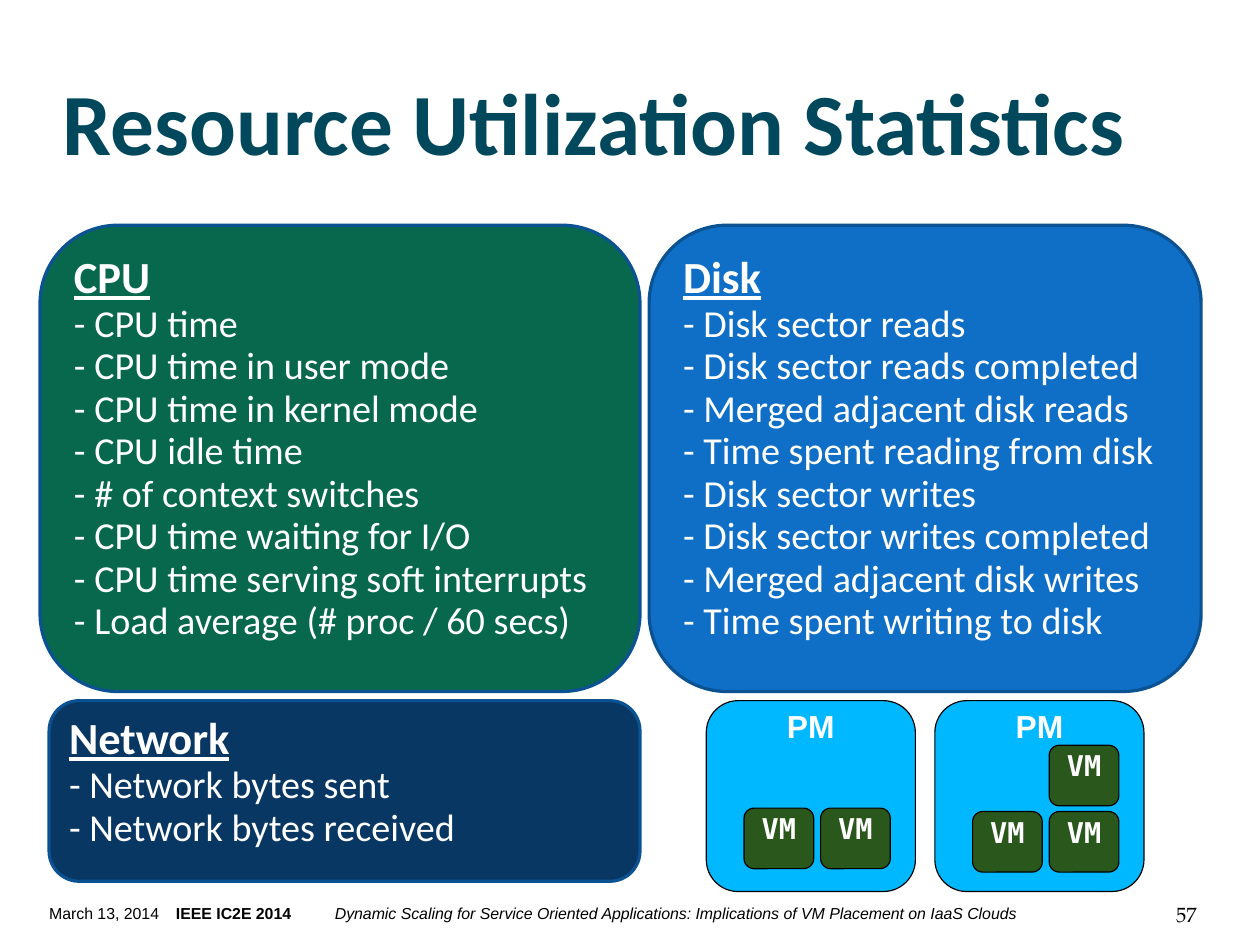
from pptx import Presentation
from pptx.dml.color import RGBColor
from pptx.enum.shapes import MSO_SHAPE
from pptx.enum.text import MSO_ANCHOR, PP_ALIGN
from pptx.util import Emu, Pt
from lxml.etree import SubElement
from pptx.oxml.ns import qn

PX = 9144  # 100 px to the inch
WIDE, HIGH = Emu(10080625), Emu(7559675)  # 28 by 21 cm page
HUES = {
    "white": "FFFFFF", "black": "000000", "title": "02485C", "edge": "0B5292",
    "cpu": "08684E", "disk": "0F6FC6", "net": "083763",
    "pm": "00B8FF", "vm": "2A581C",
}
TIGHT = 0.93

CARDS = [
    ("CPU", "cpu", (35, 197, 525, 408), [
        "CPU time", "CPU time in user mode", "CPU time in kernel mode",
        "CPU idle time", "# of context switches", "CPU time waiting for I/O",
        "CPU time serving soft interrupts", "Load average (# proc / 60 secs)"]),
    ("Disk", "disk", (568, 197, 483, 408), [
        "Disk sector reads", "Disk sector reads completed",
        "Merged adjacent disk reads", "Time spent reading from disk",
        "Disk sector writes", "Disk sector writes completed",
        "Merged adjacent disk writes", "Time spent writing to disk"]),
    ("Network", "net", (43, 613, 517, 158), [
        "Network bytes sent", "Network bytes received"]),
]

# Left edge of each machine, then the column and top of its VMs
HOSTS = [
    (618, [(1, 707), (0, 707)]),
    (818, [(1, 652), (0, 710), (1, 710)]),
]


class Deck:
    def __init__(self):
        self.show = Presentation()
        self.show.slide_width = WIDE
        self.show.slide_height = HIGH
        self.page = self.show.slides.add_slide(self.show.slide_layouts[6])

    def hue(self, name):
        return RGBColor.from_string(HUES[name])

    def style(self, run, font, size, hue, bold=False, slant=False, under=False):
        face = run.font
        face.name, face.size, face.color.rgb = font, Pt(size), self.hue(hue)
        face.bold, face.italic, face.underline = bold, slant, under

    def frame(self, shape, anchor, pad):
        """Set wrapping, anchor and insets; return the text frame."""
        text = shape.text_frame
        text.word_wrap = True
        text.vertical_anchor = anchor
        text.margin_left, text.margin_top, text.margin_right, text.margin_bottom = (
            n * PX for n in pad)
        return text

    def label(self, box, words, font, size, hue, align=PP_ALIGN.LEFT,
              bold=False, pad=(0, 0, 0, 0)):
        shape = self.page.shapes.add_textbox(*(n * PX for n in box))
        text = self.frame(shape, MSO_ANCHOR.MIDDLE, pad)
        text.text = words
        line = text.paragraphs[0]
        line.alignment = align
        self.style(line.runs[0], font, size, hue, bold)

    def round(self, box, fill, edge, width, pad):
        """Draw a rounded box and return its text frame."""
        shape = self.page.shapes.add_shape(
            MSO_SHAPE.ROUNDED_RECTANGLE, *(n * PX for n in box))
        shape.shadow.inherit = False
        shape.fill.solid()
        shape.fill.fore_color.rgb = self.hue(fill)
        shape.line.color.rgb = self.hue(edge)
        shape.line.width = Pt(width)
        return self.frame(shape, MSO_ANCHOR.TOP, pad)

    def card(self, head, fill, box, items):
        text = self.round(box, fill, "edge", 2, (10, 5, 10, 5))
        text.text = "\n".join([head] + [f"- {item}" for item in items])
        for i, line in enumerate(text.paragraphs):
            line.alignment = PP_ALIGN.LEFT
            line.line_spacing = TIGHT
            top = i == 0
            self.style(line.runs[0], "Calibri", 28 if top else 24, "white",
                       bold=top, under=top)

    def node(self, box, fill, words, font, size, space=1.0):
        text = self.round(box, fill, "black", 0.75, (0, 0, 0, 0))
        text.text = words
        line = text.paragraphs[0]
        line.alignment = PP_ALIGN.CENTER
        line.line_spacing = space
        self.style(line.runs[0], font, size, "white", bold=True)

    def foot(self, box, parts, stops):
        """Write one line of (words, bold, slant) parts set on tab stops."""
        shape = self.page.shapes.add_textbox(*(n * PX for n in box))
        line = self.frame(shape, MSO_ANCHOR.MIDDLE, (0, 0, 0, 0)).paragraphs[0]
        line.line_spacing = TIGHT
        tabs = SubElement(line._p.get_or_add_pPr(), qn("a:tabLst"))
        for stop in stops:
            SubElement(tabs, qn("a:tab"), pos=str(stop * PX), algn="l")
        for i, (words, bold, slant) in enumerate(parts):
            run = line.add_run()
            run.text = words if i == len(parts) - 1 else words + "\t"
            self.style(run, "Arial", 10, "black", bold, slant)


def main():
    deck = Deck()
    deck.foot((43, 778, 975, 44), [
        ("March 13, 2014", False, False),
        ("IEEE IC2E 2014", True, False),
        ("Dynamic Scaling for Service Oriented Applications: "
         "Implications of VM Placement on IaaS Clouds", False, True),
    ], (111, 250))
    deck.label((55, -9, 992, 223), "Resource Utilization Statistics",
               "Calibri", 55, "title", bold=True, pad=(0, 6, 0, 0))
    deck.label((1010, 778, 37, 44), "57", "TeX Gyre Pagella", 13, "black",
               align=PP_ALIGN.RIGHT)
    for card in CARDS:
        deck.card(*card)
    for left, cells in HOSTS:
        deck.node((left, 613, 183, 167), "pm", "PM", "Arial", 20, TIGHT)
        for col, top in cells:
            deck.node((left + 33 + 67 * col, top, 61, 53), "vm", "VM",
                      "DejaVu Sans Mono", 18)
    deck.show.save("out.pptx")


if __name__ == "__main__":
    main()
